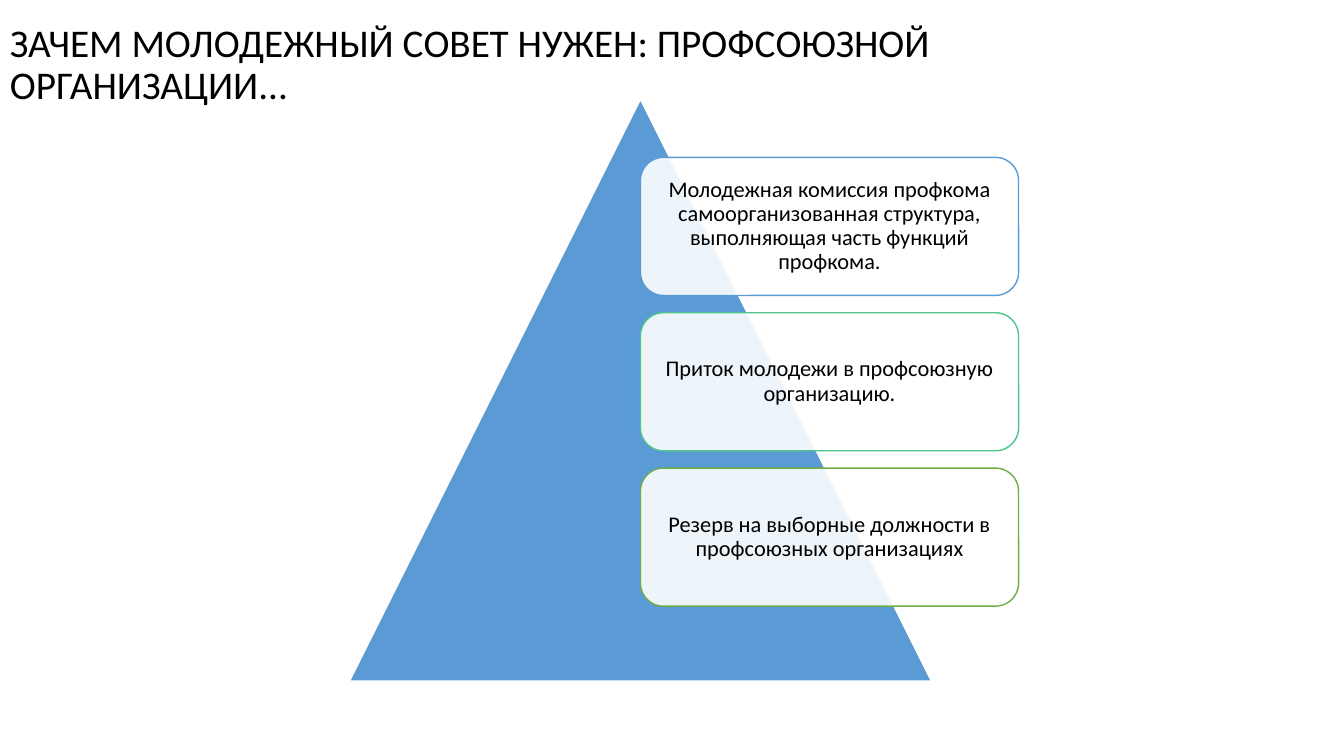
from lxml.etree import SubElement
from pptx import Presentation
from pptx.dml.color import RGBColor
from pptx.enum.shapes import MSO_SHAPE
from pptx.enum.text import MSO_ANCHOR, PP_ALIGN
from pptx.oxml.ns import qn
from pptx.util import Cm, Pt

TITLE = "ЗАЧЕМ МОЛОДЕЖНЫЙ СОВЕТ НУЖЕН: ПРОФСОЮЗНОЙ ОРГАНИЗАЦИИ..."
CARDS = [
    ("Молодежная комиссия профкома самоорганизованная структура, "
     "выполняющая часть функций профкома.", "5B9BD5"),
    ("Приток молодежи в профсоюзную организацию.", "4DC58D"),
    ("Резерв на выборные должности в профсоюзных организациях", "70AD47"),
]


def color(code):
    """Turn a hex string into a colour."""
    return RGBColor.from_string(code)


def apply(item, values):
    """Set the attributes of an item from a dict."""
    for name, value in values.items():
        setattr(item, name, value)


def write(shape, text, size, align, inset):
    """Write one paragraph, centred in height, into a shape."""
    frame = shape.text_frame
    apply(frame, {"text": text, "word_wrap": True,
                  "vertical_anchor": MSO_ANCHOR.MIDDLE, **inset})
    para = frame.paragraphs[0]
    apply(para, {"alignment": align, "line_spacing": 0.9})
    apply(para.font, {"name": "Calibri", "size": Pt(size)})
    para.font.color.rgb = color("000000")


def draw(slide, kind, box, fill, line):
    """Add a filled and outlined shape in a box given in centimetres."""
    shape = slide.shapes.add_shape(kind, *map(Cm, box))
    shape.shadow.inherit = False
    shape.fill.solid()
    shape.fill.fore_color.rgb = color(fill)
    shape.line.color.rgb = color(line)
    shape.line.width = Pt(1)
    return shape


def add_title(slide, box):
    """Place the heading in the upper part of its box."""
    title = slide.shapes.title
    names = ("left", "top", "width", "height")
    apply(title, dict(zip(names, map(Cm, box))))
    write(title, TITLE, 28, PP_ALIGN.LEFT,
          {"margin_left": Cm(0.25), "margin_right": Cm(0.25),
           "margin_top": Cm(0.13), "margin_bottom": Cm(1.22)})


def add_card(slide, box, text, line):
    """Draw one translucent rounded card with its text."""
    card = draw(slide, MSO_SHAPE.ROUNDED_RECTANGLE, box, "FFFFFF", line)
    tint = card.fill._xPr.find(qn("a:solidFill"))[0]
    SubElement(tint, qn("a:alpha"), val="90000")
    sides = ("left", "right", "top", "bottom")
    write(card, text, 16, PP_ALIGN.CENTER,
          {f"margin_{side}": Cm(0.18) for side in sides})


def add_pyramid(slide, box):
    """Draw the triangle and stack the cards from its middle line."""
    left, top, width, height = box
    draw(slide, MSO_SHAPE.ISOSCELES_TRIANGLE, box, "5B9BD5", "FFFFFF")
    tall = 3.48
    step = tall * 9 / 8
    for i, (text, line) in enumerate(CARDS):
        place = (left + width / 2, top + height / 10 + i * step,
                 width * 0.65, tall)
        add_card(slide, place, text, line)


def main():
    """Build and save the slide."""
    deck = Presentation()
    apply(deck, {"slide_width": Cm(33.87), "slide_height": Cm(19.05)})
    slide = deck.slides.add_slide(deck.slide_layouts[5])
    add_title(slide, (0, 0.36, 25.22, 3.68))
    add_pyramid(slide, (8.81, 2.5, 14.66, 14.66))
    deck.save("out.pptx")


if __name__ == "__main__":
    main()
